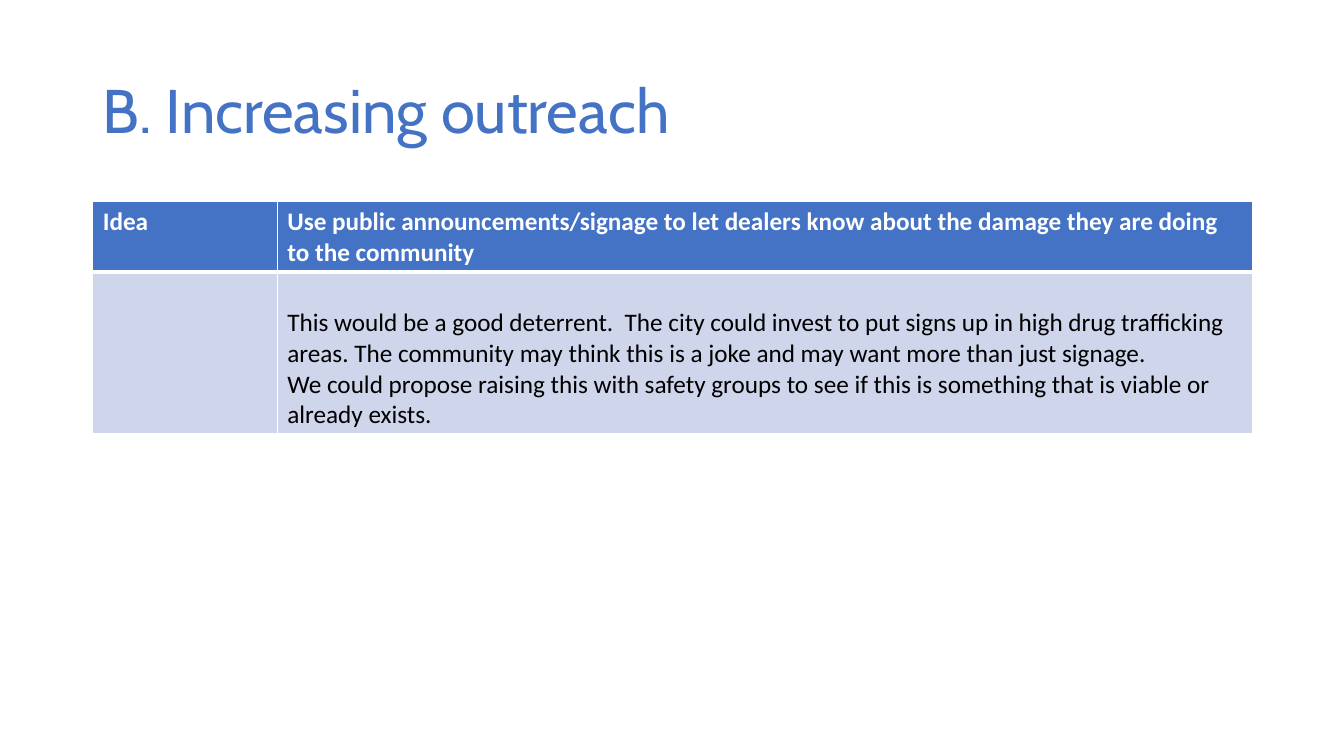
from lxml import etree
from pptx import Presentation
from pptx import util as u
from pptx.dml.color import RGBColor
from pptx.enum import text
from pptx.oxml.ns import qn

TITLE = "B. Increasing outreach"
ROWS = [
    [
        ["Idea"],
        ["Use public announcements/signage to let dealers know about the damage "
         "they are doing to the community"],
    ],
    [
        [],
        ["This would be a good deterrent.  The city could invest to put signs up in "
         "high drug trafficking areas. The community may think this is a joke and may "
         "want more than just signage.",
         "We could propose raising this with safety groups to see if this is something "
         "that is viable or already exists."],
    ],
]
COLUMN_WIDTHS = [1.83, 9.67]
ROW_HEIGHTS = [0.7, 1.6]
TOP_MARGINS = [0.05, 0.35]
LEFT, TITLE_TOP, TITLE_HEIGHT, TABLE_TOP = 0.92, 0.4, 1.45, 2

THEME = {
    "accent": "4472C4",
    "band": "CFD5EA",
    "white": "FFFFFF",
    "black": "000000",
    "title_font": "Cabin",
    "body_font": "Calibri",
    "title_size": 44,
    "body_size": 18,
    "rule": 1,
    "header_rule": 3,
}


def style(paragraph, font, size, color, bold=False):
    paragraph.font.name = THEME[font]
    paragraph.font.size = u.Pt(THEME[size])
    paragraph.font.color.rgb = RGBColor.from_string(THEME[color])
    paragraph.font.bold = bold


def set_borders(cell, widths):
    properties = cell._tc.get_or_add_tcPr()
    for position, (side, width) in enumerate(widths.items()):
        line = etree.Element(qn(f"a:ln{side}"), w=str(u.Pt(width)))
        fill = etree.SubElement(line, qn("a:solidFill"))
        etree.SubElement(fill, qn("a:srgbClr"), val=THEME["white"])
        properties.insert(position, line)


def add_title(slide, width):
    box = slide.shapes.add_textbox(
        u.Inches(LEFT), u.Inches(TITLE_TOP), u.Inches(width), u.Inches(TITLE_HEIGHT))
    frame = box.text_frame
    frame.word_wrap = True
    frame.vertical_anchor = text.MSO_ANCHOR.MIDDLE
    paragraph = frame.paragraphs[0]
    paragraph.text = TITLE
    paragraph.line_spacing = 0.9
    style(paragraph, "title_font", "title_size", "accent")


def fill_cell(cell, lines, row):
    header = row == 0
    cell.text = "\n".join(lines)
    cell.margin_top = u.Inches(TOP_MARGINS[row])
    for paragraph in cell.text_frame.paragraphs:
        style(paragraph, "body_font", "body_size",
              "white" if header else "black", header)
    cell.fill.solid()
    cell.fill.fore_color.rgb = RGBColor.from_string(
        THEME["accent" if header else "band"])
    rule, thick = THEME["rule"], THEME["header_rule"]
    set_borders(cell, {
        "L": rule,
        "R": rule,
        "T": rule if header else thick,
        "B": thick if header else rule,
    })


def add_idea_table(slide, width):
    table = slide.shapes.add_table(
        len(ROWS), len(COLUMN_WIDTHS), u.Inches(LEFT), u.Inches(TABLE_TOP),
        u.Inches(width), u.Inches(sum(ROW_HEIGHTS))).table
    for column, column_width in zip(table.columns, COLUMN_WIDTHS):
        column.width = u.Inches(column_width)
    for row, cells in enumerate(ROWS):
        table.rows[row].height = u.Inches(ROW_HEIGHTS[row])
        for column, lines in enumerate(cells):
            fill_cell(table.cell(row, column), lines, row)


def main():
    presentation = Presentation()
    presentation.slide_width = u.Inches(13.33)
    presentation.slide_height = u.Inches(7.5)
    slide = presentation.slides.add_slide(presentation.slide_layouts[6])
    width = sum(COLUMN_WIDTHS)
    add_title(slide, width)
    add_idea_table(slide, width)
    presentation.save("out.pptx")


if __name__ == "__main__":
    main()
